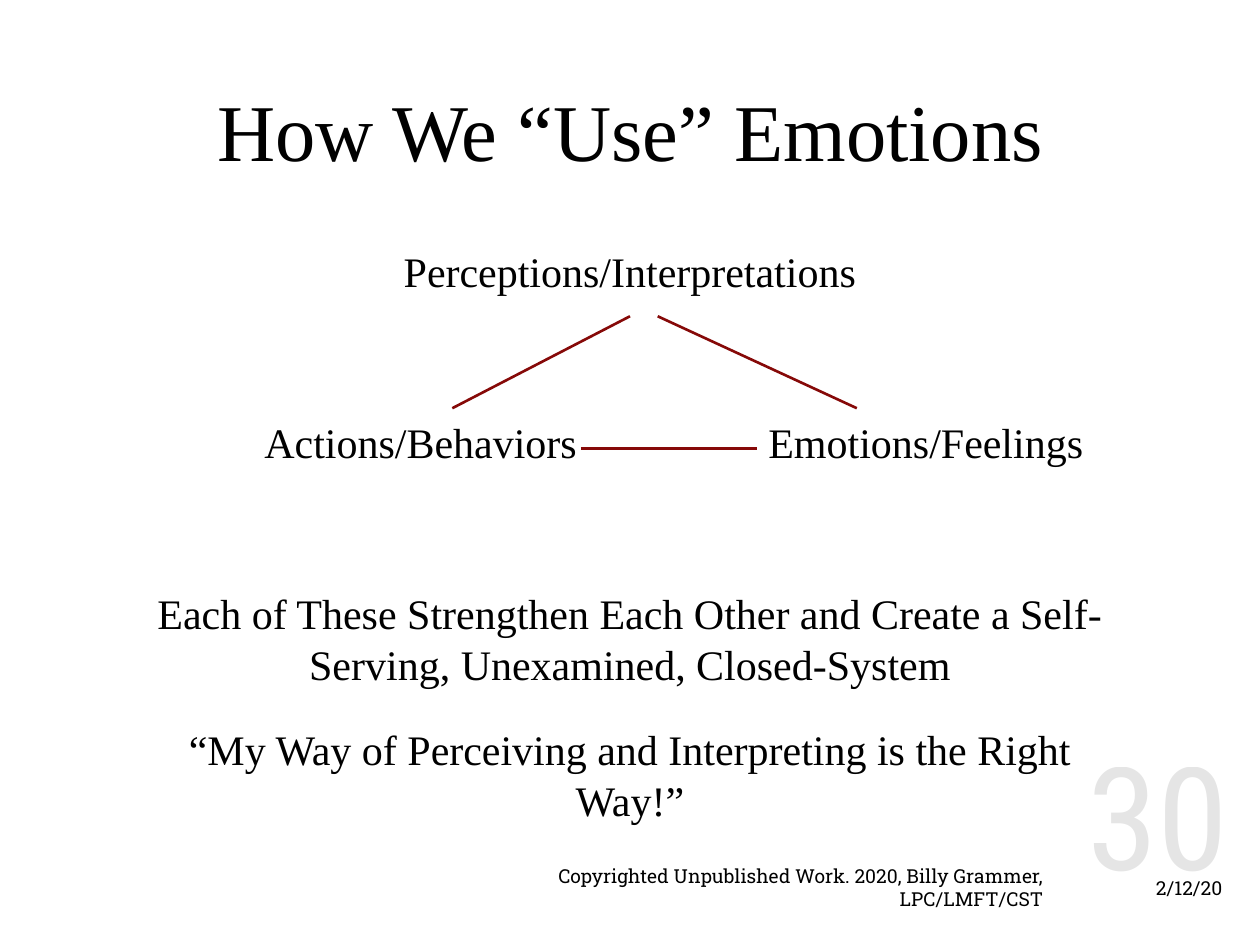
from lxml.etree import SubElement
from pptx import Presentation
from pptx.dml.color import RGBColor
from pptx.enum.shapes import MSO_CONNECTOR
from pptx.enum.text import MSO_ANCHOR as Anchor, PP_ALIGN as Align
from pptx.oxml.ns import qn
from pptx.util import Inches, Pt

BLACK = RGBColor(0, 0, 0)
DARK_RED = RGBColor(0x86, 0x09, 0x08)
SERIF, SLAB, CONDENSED = "Times New Roman", "Roboto Slab", "Roboto Condensed"
BODY_GAP, BLANK_LINE_GAP = 20, 69


def format_frame(frame, anchor):
    frame.word_wrap = True
    frame.vertical_anchor = anchor
    frame.margin_left = frame.margin_right = Inches(0.1)
    frame.margin_top = frame.margin_bottom = Inches(0.05)


def format_paragraph(paragraph, font_name, size, align):
    paragraph.alignment = align
    font = paragraph.font
    font.name, font.size, font.bold = font_name, Pt(size), False
    font.color.rgb = BLACK


def add_title(slide, text):
    title = slide.shapes.title
    title.left, title.top = Inches(1), Inches(0.55)
    title.width, title.height = Inches(8), Inches(0.95)
    title.text = text
    format_frame(title.text_frame, Anchor.MIDDLE)
    format_paragraph(title.text_frame.paragraphs[0], SERIF, 46, Align.CENTER)


def add_box(slide, place, anchor=Anchor.MIDDLE):
    frame = slide.shapes.add_textbox(*map(Inches, place)).text_frame
    format_frame(frame, anchor)
    return frame


def add_footer_text(slide, place, text, font_name=SLAB, size=11):
    paragraph = add_box(slide, place).paragraphs[0]
    paragraph.text = text
    format_paragraph(paragraph, font_name, size, Align.RIGHT)
    return paragraph


def add_tab_stops(paragraph, *positions):
    stops = SubElement(paragraph._p.get_or_add_pPr(), qn("a:tabLst"))
    for position in positions:
        SubElement(stops, qn("a:tab"), pos=str(Inches(position)), algn="l")


def add_body(slide, lines):
    """Each line is its text, space before in points, and tab stops in inches."""
    frame = add_box(slide, (1, 1.9, 8, 4.44), Anchor.TOP)
    for index, (text, gap, stops) in enumerate(lines):
        paragraph = frame.add_paragraph() if index else frame.paragraphs[0]
        paragraph.text = text
        if stops:
            add_tab_stops(paragraph, *stops)
        paragraph.space_before = Pt(gap)
        format_paragraph(paragraph, SERIF, 24, Align.LEFT if stops else Align.CENTER)


def fade(paragraph, percent):
    """Makes the paragraph's colour transparent, keeping percent of its opacity."""
    for colour in paragraph._p.iter(qn("a:srgbClr")):
        SubElement(colour, qn("a:alpha"), val=str(percent * 1000))


def add_side(slide, start, end):
    side = slide.shapes.add_connector(
        MSO_CONNECTOR.STRAIGHT, *map(Inches, (*start, *end)))
    side.line.color.rgb = DARK_RED
    side.line.width = Pt(1.5)
    SubElement(side._element.spPr, qn("a:effectLst"))


def main():
    deck = Presentation()
    deck.slide_width, deck.slide_height = Inches(10), Inches(7.5)
    slide = deck.slides.add_slide(deck.slide_layouts[5])

    add_title(slide, "How We “Use” Emotions")
    add_body(slide, [
        ("Perceptions/Interpretations", 0, ()),
        ("\tActions/Behaviors\tEmotions/Feelings", BLANK_LINE_GAP, (1, 5)),
        ("Each of These Strengthen Each Other and Create a "
         "Self-Serving, Unexamined, Closed-System", BLANK_LINE_GAP, ()),
        ("“My Way of Perceiving and Interpreting is the Right Way!”", BODY_GAP, ()),
    ])

    add_footer_text(slide, (8.38, 6.9, 1.42, 0.29), "2/12/20")
    add_footer_text(slide, (4.31, 6.9, 4.07, 0.28),
                    "Copyrighted Unpublished Work. 2020, Billy Grammer, LPC/LMFT/CST")
    page_number = add_footer_text(slide, (8.23, 5.99, 1.62, 0.93), "30", CONDENSED, 82)
    fade(page_number, 10)

    apex_y, foot_y, base_y = 2.51, 3.24, 3.56
    add_side(slide, (5.22, apex_y), (6.8, foot_y))
    add_side(slide, (5, apex_y), (3.59, foot_y))
    add_side(slide, (4.61, base_y), (6.01, base_y))

    deck.save("out.pptx")


if __name__ == "__main__":
    main()
